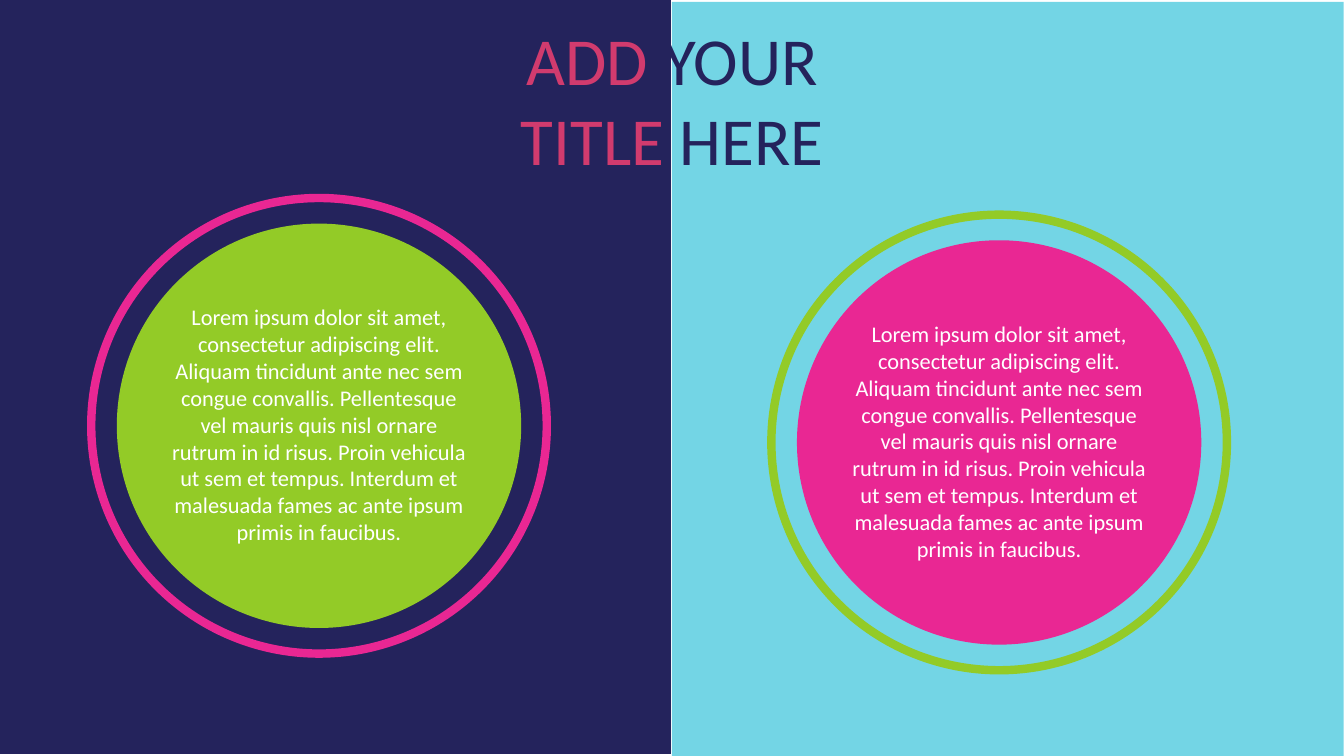
"""Build a two-panel title slide with a ringed text circle on each side."""
from lxml.etree import SubElement
from pptx import Presentation
from pptx.dml.color import RGBColor
from pptx.enum.shapes import MSO_SHAPE
from pptx.enum.text import MSO_ANCHOR, MSO_AUTO_SIZE, PP_ALIGN
from pptx.oxml.ns import qn
from pptx.util import Cm, Pt

NAVY = RGBColor(0x24, 0x23, 0x5C)
CYAN = RGBColor(0x00, 0xB3, 0xD0)
GREEN = RGBColor(0x93, 0xCB, 0x27)
PINK = RGBColor(0xE9, 0x27, 0x93)
ROSE = RGBColor(0xD1, 0x3B, 0x6E)
WHITE = RGBColor(0xFF, 0xFF, 0xFF)

DISC, RING = 10.19, 11.48
BODY = (
    "Lorem ipsum dolor sit amet, consectetur adipiscing elit. "
    "Aliquam tincidunt ante nec sem congue convallis. "
    "Pellentesque vel mauris quis nisl ornare rutrum in id risus. "
    "Proin vehicula ut sem et tempus. "
    "Interdum et malesuada fames ac ante ipsum primis in faucibus."
)

prs = Presentation()
prs.slide_width, prs.slide_height = Cm(33.87), Cm(19.05)
s = prs.slides.add_slide(prs.slide_layouts[5])


def add_filled(kind, x, y, w, h, color):
    sp = s.shapes.add_shape(kind, Cm(x), Cm(y), Cm(w), Cm(h))
    sp.shadow.inherit = False
    sp.fill.solid()
    sp.fill.fore_color.rgb = color
    sp.line.fill.background()
    return sp


panel = add_filled(MSO_SHAPE.RECTANGLE, 16.93, 0.05, 16.93, 19.05, CYAN)
clr = panel.element.spPr.find(qn("a:solidFill")).find(qn("a:srgbClr"))
SubElement(clr, qn("a:alpha")).set("val", "55000")
add_filled(MSO_SHAPE.RECTANGLE, -0.02, -0.05, 16.93, 19.05, NAVY)

for cx, cy, disc_color, ring_color in [
    (8.04, 10.73, GREEN, PINK),
    (25.18, 11.15, PINK, GREEN),
]:
    add_filled(MSO_SHAPE.OVAL, cx - DISC / 2, cy - DISC / 2, DISC, DISC, disc_color)

    ring = s.shapes.add_shape(
        MSO_SHAPE.OVAL, Cm(cx - RING / 2), Cm(cy - RING / 2), Cm(RING), Cm(RING)
    )
    ring.shadow.inherit = False
    ring.fill.background()
    ring.line.color.rgb = ring_color
    ring.line.width = Pt(6)

    box = s.shapes.add_textbox(Cm(cx - 4.04), Cm(cy - 3.21), Cm(8.08), Cm(7.09))
    tf = box.text_frame
    tf.word_wrap = True
    p = tf.paragraphs[0]
    p.text = BODY
    p.alignment = PP_ALIGN.CENTER
    p.font.name = "Calibri"
    p.font.size = Pt(16)
    p.font.color.rgb = WHITE

title = s.shapes.title
title.left, title.top, title.width, title.height = Cm(11.15), Cm(0.33), Cm(11.58), Cm(4.37)
s.shapes.element.append(title.element)
tf = title.text_frame
tf.word_wrap = True
tf.auto_size = MSO_AUTO_SIZE.NONE
tf.vertical_anchor = MSO_ANCHOR.TOP
p = tf.paragraphs[0]
p.alignment = PP_ALIGN.CENTER
p.font.name = "Calibri"
p.font.size = Pt(48)
for text, color in [("ADD ", ROSE), ("YOUR", NAVY), (" TITLE ", ROSE), ("HERE", NAVY)]:
    r = p.add_run()
    r.text = text
    r.font.color.rgb = color

prs.save("out.pptx")
